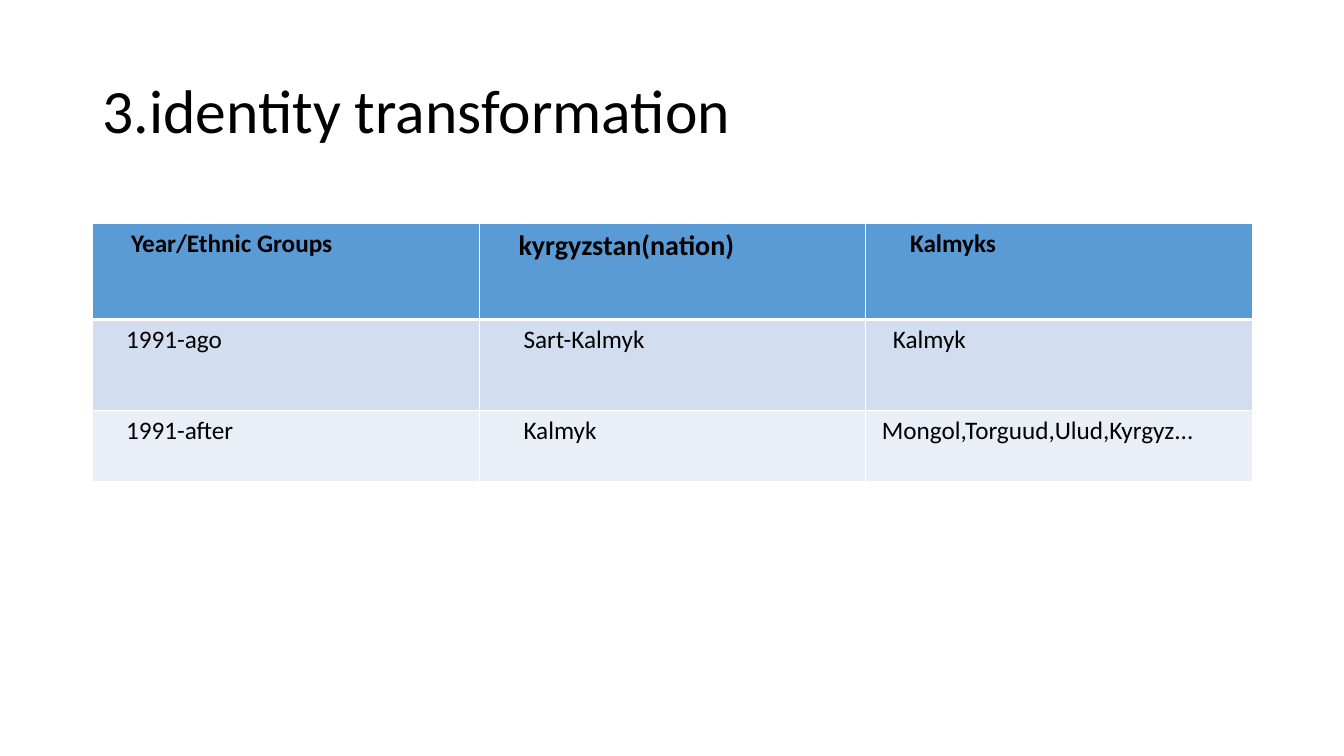
from lxml import etree
from pptx import Presentation
from pptx.dml.color import RGBColor
from pptx.enum.text import MSO_ANCHOR, PP_ALIGN
from pptx.oxml.ns import qn
from pptx.util import Inches, Pt

MIDDLE = MSO_ANCHOR.MIDDLE
JUSTIFY = PP_ALIGN.JUSTIFY

BLACK = RGBColor(0x00, 0x00, 0x00)
WHITE = RGBColor(0xFF, 0xFF, 0xFF)
BLUE = RGBColor(0x5B, 0x9B, 0xD5)
LIGHT_BLUE = RGBColor(0xD2, 0xDE, 0xEF)
PALE_BLUE = RGBColor(0xEA, 0xEF, 0xF7)
FONT = "Calibri"

TITLE = "3.identity transformation"
# Each cell: text, left margin in inches
ROWS = [
    [("Year/Ethnic Groups", 0.38), ("kyrgyzstan(nation)", 0.39), ("Kalmyks", 0.44)],
    [("1991-ago", 0.33), ("Sart-Kalmyk", 0.44), ("Kalmyk", 0.27)],
    [("1991-after", 0.33), ("Kalmyk", 0.44), ("Mongol,Torguud,Ulud,Kyrgyz...", 0.16)],
]
ROW_HEIGHTS = [0.95, 0.9, 0.71]
ROW_FILLS = [BLUE, LIGHT_BLUE, PALE_BLUE]
NATION = (0, 1)  # the larger, justified heading

LEFT, WIDTH = 0.92, 11.5
TITLE_TOP, TITLE_HEIGHT = 0.4, 1.45
TABLE_TOP = 2.22


def style(p, size, bold=False):
    p.font.name = FONT
    p.font.size = Pt(size)
    p.font.bold = bold
    p.font.color.rgb = BLACK


def set_borders(cell, widths):
    """Draw white cell borders; widths maps L, R, T, B (in that order) to points."""
    tc_pr = cell._tc.get_or_add_tcPr()
    for i, (side, width) in enumerate(widths.items()):
        ln = etree.Element(qn("a:ln" + side), w=str(Pt(width)))
        fill = etree.SubElement(ln, qn("a:solidFill"))
        etree.SubElement(fill, qn("a:srgbClr"), val=str(WHITE))
        tc_pr.insert(i, ln)


def add_title(s):
    box = s.shapes.add_textbox(Inches(LEFT), Inches(TITLE_TOP),
                               Inches(WIDTH), Inches(TITLE_HEIGHT))
    tf = box.text_frame
    tf.word_wrap = True
    tf.vertical_anchor = MIDDLE
    p = tf.paragraphs[0]
    p.text = TITLE
    p.line_spacing = 0.9
    style(p, 44)


def add_identity_table(s):
    columns = len(ROWS[0])
    table = s.shapes.add_table(len(ROWS), columns, Inches(LEFT), Inches(TABLE_TOP),
                               Inches(WIDTH), Inches(sum(ROW_HEIGHTS))).table
    for column in table.columns:
        column.width = Inches(WIDTH / columns)
    for r, row in enumerate(ROWS):
        table.rows[r].height = Inches(ROW_HEIGHTS[r])
        for c, (text, margin) in enumerate(row):
            cell = table.cell(r, c)
            cell.margin_left = Inches(margin)
            cell.fill.solid()
            cell.fill.fore_color.rgb = ROW_FILLS[r]
            set_borders(cell, {"L": 1, "R": 1, "T": 3 if r == 1 else 1,
                               "B": 3 if r == 0 else 1})
            p = cell.text_frame.paragraphs[0]
            p.text = text
            style(p, 20 if (r, c) == NATION else 18, bold=r == 0)
            if (r, c) == NATION:
                p.alignment = JUSTIFY


def main():
    prs = Presentation()
    prs.slide_width, prs.slide_height = Inches(13.33), Inches(7.5)
    s = prs.slides.add_slide(prs.slide_layouts[6])
    add_title(s)
    add_identity_table(s)
    prs.save("out.pptx")


if __name__ == "__main__":
    main()
